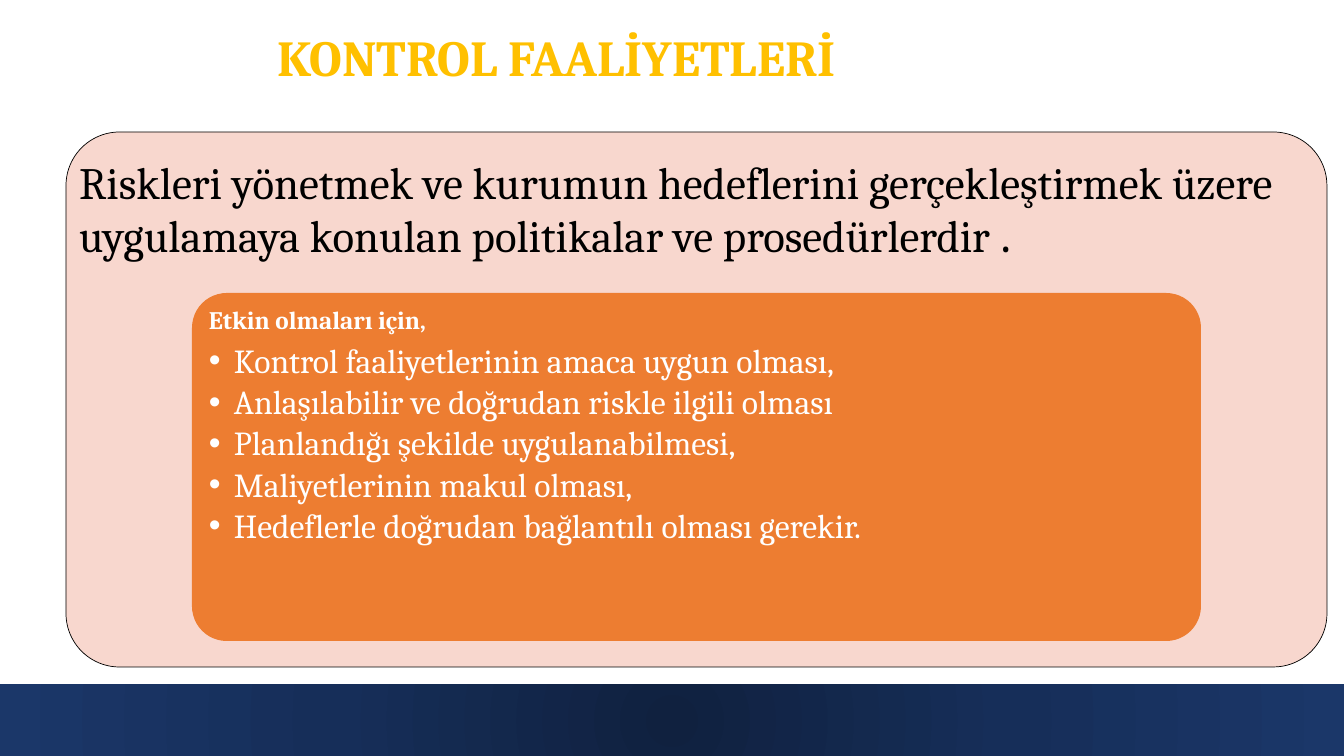
from dataclasses import dataclass

from lxml.etree import SubElement
from pptx import Presentation
from pptx.dml.color import RGBColor
from pptx.enum.shapes import MSO_SHAPE as Shape
from pptx.enum.text import MSO_ANCHOR as Anchor, MSO_AUTO_SIZE as AutoSize, PP_ALIGN as Align
from pptx.oxml import parse_xml
from pptx.oxml.ns import nsdecls, qn
from pptx.util import Pt

TITLE = "KONTROL FAALİYETLERİ"
DEFINITION = "Riskleri yönetmek ve kurumun hedeflerini gerçekleştirmek üzere uygulamaya konulan politikalar ve prosedürlerdir "
DEFINITION_END = "."
CONDITIONS_HEADING = "Etkin olmaları için,"
CONDITIONS = [
    "Kontrol faaliyetlerinin amaca uygun olması,",
    "Anlaşılabilir ve doğrudan riskle ilgili olması",
    "Planlandığı şekilde uygulanabilmesi,",
    "Maliyetlerinin makul olması,",
    "Hedeflerle doğrudan bağlantılı olması gerekir.",
]


@dataclass(frozen=True)
class Theme:
    font: str = "Cambria"
    gold: str = "FFC000"
    black: str = "000000"
    white: str = "FFFFFF"
    pink: str = "F8D7CE"
    orange: str = "ED7D31"
    band: tuple = ((0, "10213F"), (50, "162E59"), (100, "1B3769"))
    title_size: int = 36
    definition_size: int = 32
    heading_size: int = 18
    list_size: int = 24


THEME = Theme()
WIDTH, HEIGHT = 1344, 756
BAND = (-1, 684, WIDTH + 2, 74)
TITLE_BOX = (101, 21, 911, 72)
PANEL = (66, 132, 1261, 535)
DEFINITION_BOX = (*PANEL[:3], 160)
CARD = (192, 293, 1009, 348)
CARD_PADDING = 10
BULLET_INDENT = 25


def px(length):
    return round(length * 914400 / 100.8)


def color(code):
    return RGBColor.from_string(code)


def place(shape, bounds):
    shape.left, shape.top, shape.width, shape.height = map(px, bounds)


def set_frame(box, inset_x, inset_y, anchor=Anchor.TOP, fit=AutoSize.NONE):
    frame = box.text_frame
    frame.word_wrap = True
    frame.auto_size = fit
    frame.vertical_anchor = anchor
    frame.margin_left = frame.margin_right = px(inset_x)
    frame.margin_top = frame.margin_bottom = px(inset_y)
    return frame


def add_text(para, text, size, ink, bold=False):
    span = para.add_run()
    span.text = text
    span.font.name = THEME.font
    span.font.size = Pt(size)
    span.font.bold = bold
    span.font.color.rgb = color(ink)


def set_paragraph(para, bullet=None, align=Align.LEFT, line=0.9, after=0):
    properties = para._p.get_or_add_pPr()
    indent = px(BULLET_INDENT) if bullet else 0
    properties.set("marL", str(indent))
    properties.set("indent", str(-indent))
    if bullet:
        SubElement(properties, qn("a:buChar")).set("char", bullet)
    else:
        SubElement(properties, qn("a:buNone"))
    para.alignment = align
    para.line_spacing = line
    para.space_before = Pt(0)
    para.space_after = Pt(after)


def add_block(slide, kind, bounds, fill=None, outline=None):
    block = slide.shapes.add_shape(kind, *map(px, bounds))
    block.shadow.inherit = False
    if kind == Shape.ROUNDED_RECTANGLE:
        block.adjustments[0] = 0.1
    if fill:
        block.fill.solid()
        block.fill.fore_color.rgb = color(fill)
    if outline:
        block.line.color.rgb = color(outline)
        block.line.width = Pt(0.5)
    else:
        block.line.fill.background()
    return block


def fill_radial(shape, stops):
    """Fill a shape with a gradient that runs outward from its centre."""
    marks = "".join(
        f'<a:gs pos="{percent * 1000}"><a:srgbClr val="{code}"/></a:gs>' for percent, code in stops
    )
    gradient = parse_xml(
        f'<a:gradFill {nsdecls("a")}><a:gsLst>{marks}</a:gsLst><a:path path="circle">'
        '<a:fillToRect l="50000" t="50000" r="50000" b="50000"/></a:path></a:gradFill>'
    )
    shape._element.spPr.find(qn("a:prstGeom")).addnext(gradient)


def main():
    deck = Presentation()
    deck.slide_width, deck.slide_height = px(WIDTH), px(HEIGHT)
    slide = deck.slides.add_slide(deck.slide_layouts[1])
    title, conditions = slide.placeholders

    fill_radial(add_block(slide, Shape.RECTANGLE, BAND), THEME.band)

    place(title, TITLE_BOX)
    para = set_frame(title, 10, 5, fit=AutoSize.SHAPE_TO_FIT_TEXT).paragraphs[0]
    set_paragraph(para, align=Align.CENTER, line=1.0)
    add_text(para, TITLE, THEME.title_size, THEME.gold, bold=True)

    add_block(slide, Shape.ROUNDED_RECTANGLE, PANEL, THEME.pink, THEME.black)
    definition = slide.shapes.add_textbox(*map(px, DEFINITION_BOX))
    para = set_frame(definition, 13, 13, anchor=Anchor.MIDDLE).paragraphs[0]
    set_paragraph(para)
    add_text(para, DEFINITION, THEME.definition_size, THEME.black)
    add_text(para, DEFINITION_END, THEME.title_size, THEME.black)

    add_block(slide, Shape.ROUNDED_RECTANGLE, CARD, THEME.orange)
    left, top, width, height = CARD
    place(conditions, (left + CARD_PADDING, top + CARD_PADDING,
                       width - 2 * CARD_PADDING, height - 2 * CARD_PADDING))
    slide.shapes._spTree.append(conditions._element)  # bring the list in front of its card
    frame = set_frame(conditions, 7, 5)
    para = frame.paragraphs[0]
    set_paragraph(para, after=0.35 * THEME.heading_size)
    add_text(para, CONDITIONS_HEADING, THEME.heading_size, THEME.white, bold=True)
    for condition in CONDITIONS:
        para = frame.add_paragraph()
        set_paragraph(para, bullet="•", after=0.15 * THEME.list_size)
        add_text(para, condition, THEME.list_size, THEME.white)

    deck.save("out.pptx")


if __name__ == "__main__":
    main()
